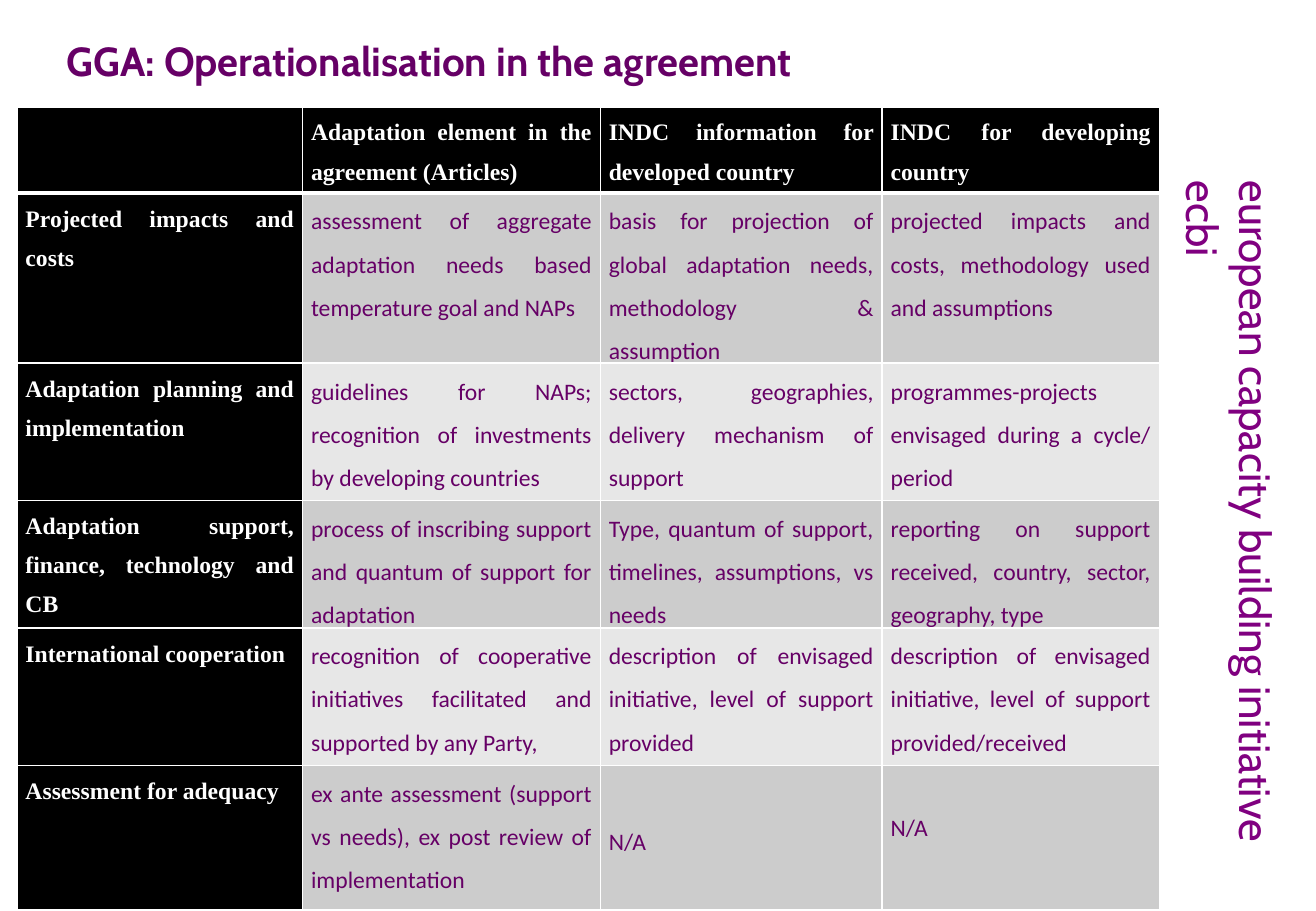
from lxml import etree
from pptx import Presentation, util as u
from pptx.dml.color import RGBColor
from pptx.enum import text
from pptx.oxml import ns

PLUM = RGBColor(0x66, 0x00, 0x66)
PURPLE = RGBColor(0x80, 0x00, 0x80)
WHITE = RGBColor(0xFF, 0xFF, 0xFF)
BLACK = RGBColor(0x00, 0x00, 0x00)
BANDS = [RGBColor(0xE7, 0xE7, 0xE7), RGBColor(0xCC, 0xCC, 0xCC)]

COLS = [2.35, 2.45, 2.32, 2.28]
ROWS = [0.71, 1.4, 1.13, 1.05, 1.13, 1.19]  # ends at the slide's lower edge
CELLS = [
    ["", "Adaptation element in the agreement (Articles)",
     "INDC information for developed country",
     "INDC for developing country"],
    ["Projected impacts and costs",
     "assessment of aggregate adaptation needs based temperature goal and NAPs",
     "basis for projection of global adaptation needs, methodology & assumption",
     "projected impacts and costs, methodology used and assumptions"],
    ["Adaptation planning and implementation",
     "guidelines for NAPs; recognition of investments by developing countries",
     "sectors, geographies, delivery mechanism of support",
     "programmes-projects envisaged during a cycle/ period"],
    ["Adaptation support, finance, technology and CB",
     "process of inscribing support and quantum of support for adaptation",
     "Type, quantum of support, timelines, assumptions, vs needs",
     "reporting on support received, country, sector, geography, type"],
    ["International cooperation",
     "recognition of cooperative initiatives facilitated and supported by any Party,",
     "description of envisaged initiative, level of support provided",
     "description of envisaged initiative, level of support provided/received"],
    ["Assessment for adequacy",
     "ex ante assessment (support vs needs), ex post review of implementation",
     "N/A", "N/A"],
]
DROPS = {(5, 2): 0.4, (5, 3): 0.28}  # top margins of the N/A cells


def style(para, name, size, color, bold=False):
    font = para.font
    font.name, font.size, font.bold = name, u.Pt(size), bold
    font.color.rgb = color


def edge(cell, side, width):
    line = etree.SubElement(cell._tc.get_or_add_tcPr(), ns.qn("a:ln" + side),
                            w=str(u.Pt(width)))
    fill = etree.SubElement(line, ns.qn("a:solidFill"))
    etree.SubElement(fill, ns.qn("a:srgbClr"), val=str(WHITE))


deck = Presentation()
deck.slide_width, deck.slide_height = u.Inches(10.83), u.Inches(7.5)
slide = deck.slides.add_slide(deck.slide_layouts[6])

# Side banner and title
for words, box, size, color, bold, turn in [
    ("european capacity building initiative ecbi",
     (9.86, 1.39, 0.75, 5.99), 26, PURPLE, False, "eaVert"),
    ("GGA: Operationalisation in the agreement",
     (0.45, 0.25, 7.99, 0.5), 24, PLUM, True, "horz"),
]:
    frame = slide.shapes.add_textbox(*map(u.Inches, box)).text_frame
    frame.word_wrap = True
    frame._txBody.bodyPr.set("vert", turn)
    frame.text = words
    style(frame.paragraphs[0], "Cabin", size, color, bold)

# Table grid
table = slide.shapes.add_table(
    len(ROWS), len(COLS), u.Inches(0.14), u.Inches(0.88),
    u.Inches(sum(COLS)), u.Inches(sum(ROWS))).table
table.horz_banding = False
for col, width in zip(table.columns, COLS):
    col.width = u.Inches(width)
for row, height in zip(table.rows, ROWS):
    row.height = u.Inches(height)

# Table cells
for r, words in enumerate(CELLS):
    for c, word in enumerate(words):
        cell = table.cell(r, c)
        head = r == 0 or c == 0
        cell.margin_left = cell.margin_right = u.Inches(0.07)
        cell.margin_top = u.Inches(DROPS.get((r, c), 0))
        cell.margin_bottom = 0
        for side in "LRTB":
            thick = (r, side) in [(0, "B"), (1, "T")]
            edge(cell, side, 3 if thick else 1)
        cell.fill.solid()
        cell.fill.fore_color.rgb = BLACK if head else BANDS[r % 2]
        cell.text = word
        para = cell.text_frame.paragraphs[0]
        para.alignment = text.PP_ALIGN.JUSTIFY
        para.line_spacing = 1.5
        if head:
            para.space_after = u.Pt(3)
            style(para, "Times New Roman", 14, WHITE, True)
        else:
            style(para, "Calibri", 14, PLUM)

deck.save("out.pptx")
